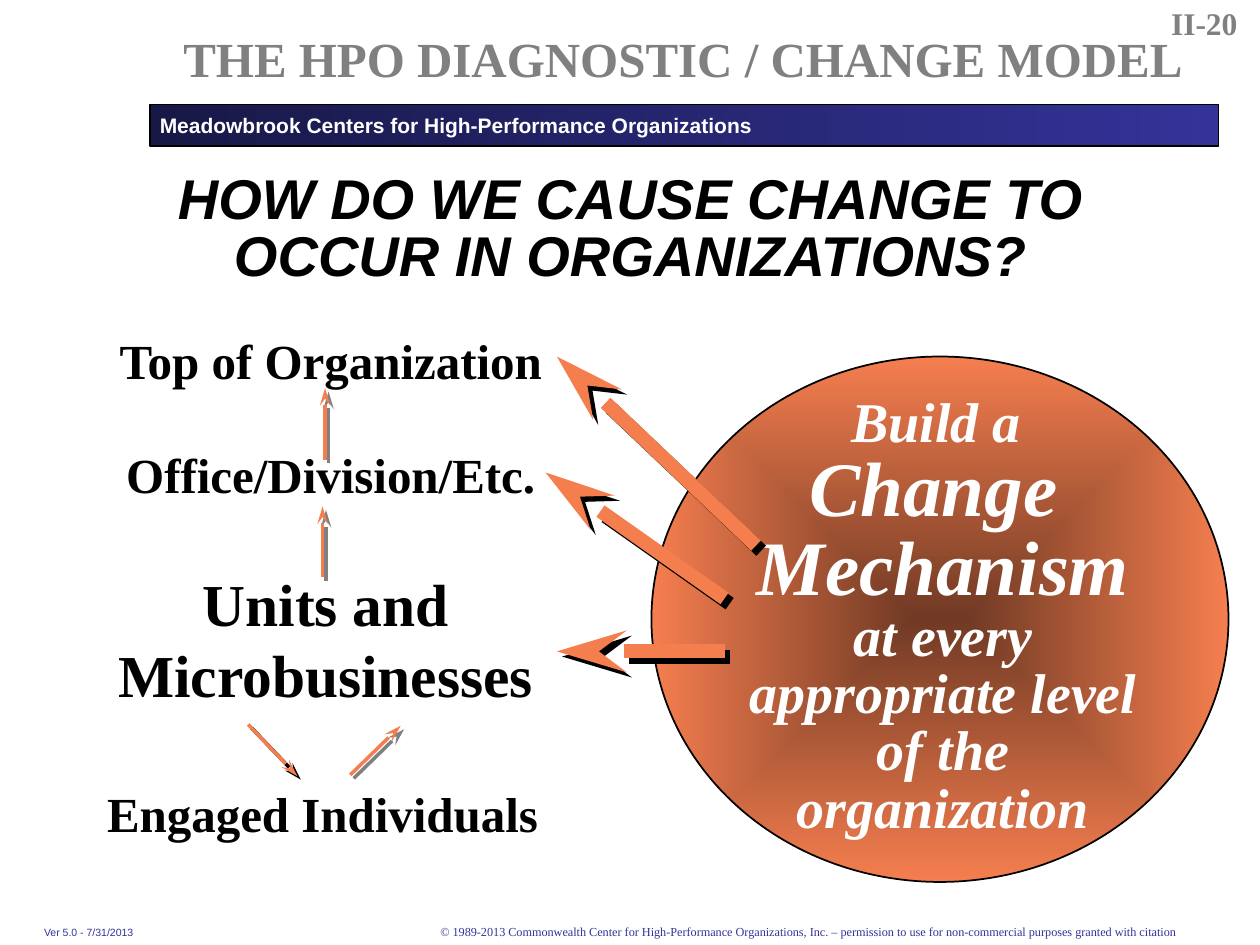
"""Build the organizational change model slide."""
from lxml.etree import SubElement
from pptx import Presentation
from pptx.dml.color import RGBColor
from pptx.enum.shapes import MSO_CONNECTOR, MSO_SHAPE
from pptx.enum.text import MSO_ANCHOR, MSO_AUTO_SIZE, PP_ALIGN
from pptx.oxml import parse_xml
from pptx.oxml.ns import nsdecls, qn
from pptx.util import Inches, Pt

BLACK = RGBColor(0x00, 0x00, 0x00)
WHITE = RGBColor(0xFF, 0xFF, 0xFF)
GRAY = RGBColor(0x80, 0x80, 0x80)
SILVER = RGBColor(0xC0, 0xC0, 0xC0)
ORANGE = RGBColor(0xF5, 0x7E, 0x4F)
BROWN = RGBColor(0x71, 0x3A, 0x24)
BLUE = RGBColor(0x33, 0x33, 0x99)
NAVY = RGBColor(0x18, 0x18, 0x47)
SERIF = "Times New Roman"
SANS = "Arial"
CENTER = PP_ALIGN.CENTER


def shadow_effect(color, distance):
    """Return an effect list with one diagonal shadow."""
    return parse_xml(
        f'<a:effectLst {nsdecls("a")}><a:outerShdw dist="{Pt(distance)}" dir="2700000" '
        f'algn="ctr" rotWithShape="0"><a:srgbClr val="{color}"/></a:outerShdw></a:effectLst>'
    )


class SlideBuilder:
    """Hold the text style and the current slide."""

    style = {"name": SERIF, "bold": True, "italic": False}

    def __init__(self, slide):
        """Keep the slide that receives the elements."""
        self.slide = slide

    def format_text(self, shape, lines, size, color, align=CENTER, anchor=MSO_ANCHOR.TOP,
                    margins=(0.1, 0.05), wrap=True, spacing=None, gap=0, shadow=None, **changes):
        """Fill a shape with formatted paragraphs."""
        frame = shape.text_frame
        across, down = (Inches(margin) for margin in margins)
        layout = {"word_wrap": wrap, "auto_size": MSO_AUTO_SIZE.NONE, "vertical_anchor": anchor,
                  "margin_left": across, "margin_right": across,
                  "margin_top": down, "margin_bottom": down}
        for name, value in layout.items():
            setattr(frame, name, value)
        sizes = size if isinstance(size, list) else [size] * len(lines)
        for index, (line, points) in enumerate(zip(lines, sizes)):
            paragraph = frame.add_paragraph() if index else frame.paragraphs[0]
            paragraph.text = line
            values = {"alignment": align, "line_spacing": spacing,
                      "space_before": Pt(gap if index else 0)}
            for name, value in values.items():
                setattr(paragraph, name, value)
            for run in paragraph.runs:
                for name, value in {**self.style, "size": Pt(points), **changes}.items():
                    setattr(run.font, name, value)
                run.font.color.rgb = color
                if shadow is not None:
                    fill = run.font._element.find(qn("a:solidFill"))
                    fill.addnext(shadow_effect(shadow, 2))

    def title(self, box, text, size, color, **options):
        """Move and format the title placeholder."""
        shape = self.slide.shapes.title
        for name, value in zip(("left", "top", "width", "height"), box):
            setattr(shape, name, Inches(value))
        self.format_text(shape, [text], size, color, **options)

    def text(self, box, lines, size, color, **options):
        """Add a text box."""
        shape = self.slide.shapes.add_textbox(*map(Inches, box))
        self.format_text(shape, lines, size, color, **options)

    def gradient(self, kind, box, colors, radial=False):
        """Add an outlined shape with a two-color gradient."""
        shape = self.slide.shapes.add_shape(kind, *map(Inches, box))
        shape.shadow.inherit = False
        shape.line.color.rgb = BLACK
        shape.line.width = Pt(1)
        shape.fill.gradient()
        shape.fill.gradient_angle = 0
        for stop, color in zip(shape.fill.gradient_stops, colors):
            stop.color.rgb = color
        if radial:
            linear = shape._element.spPr.find(qn("a:gradFill")).find(qn("a:lin"))
            linear.getparent().replace(linear, parse_xml(
                f'<a:path {nsdecls("a")} path="shape">'
                '<a:fillToRect l="50000" t="50000" r="50000" b="50000"/></a:path>'
            ))

    def arrow(self, start, end, width, shadow, distance):
        """Add a straight arrow with a shadow."""
        connector = self.slide.shapes.add_connector(
            MSO_CONNECTOR.STRAIGHT, *map(Inches, (*start, *end)))
        connector.line.color.rgb = ORANGE
        connector.line.width = Pt(width)
        properties = connector._element.spPr
        SubElement(properties.find(qn("a:ln")), qn("a:tailEnd"), type="stealth", w="med", len="lg")
        properties.append(shadow_effect(shadow, distance))


def main():
    """Create and save the presentation."""
    presentation = Presentation()
    presentation.slide_width = Inches(10)
    presentation.slide_height = Inches(7.5)
    builder = SlideBuilder(presentation.slides.add_slide(presentation.slide_layouts[5]))
    middle = MSO_ANCHOR.MIDDLE

    footer = {"bold": False, "margins": (0, 0), "anchor": middle}
    builder.text((0.35, 7.3, 1.17, 0.2), ["Ver 5.0 - 7/31/2013"], 6, BLUE,
                 align=PP_ALIGN.LEFT, name=SANS, **footer)
    builder.text((3.08, 7.28, 6.67, 0.22), [
        "© 1989-2013 Commonwealth Center for High-Performance Organizations, Inc. – "
        "permission to use for non-commercial purposes granted with citation"], 7, BLUE, **footer)

    builder.gradient(MSO_SHAPE.OVAL, (5.17, 2.83, 4.58, 4.17), (BROWN, ORANGE), radial=True)
    builder.text((5.83, 3.1, 3.31, 3.65),
                 ["Build a ", "Change \vMechanism", "at every appropriate level of the organization"],
                 [32, 44, 32], WHITE, spacing=0.85, shadow=BLACK, italic=True)

    builder.text((0.73, 6.17, 3.66, 0.57), ["Engaged Individuals"], 28, BLACK, wrap=False)
    builder.text((0.83, 2.57, 3.59, 1.52), ["Top of Organization", "Office/Division/Etc."],
                 28, BLACK, gap=32)
    builder.text((0.67, 4.45, 3.83, 1.25), ["Units and Microbusinesses"], 34, BLACK)

    for start, end in (((5.75, 5.17), (4.42, 5.17)),
                       ((5.75, 4.75), (4.33, 3.75)),
                       ((6, 4.33), (4.42, 2.83))):
        builder.arrow(start, end, 8, BLACK, 4.2)
    for start, end, shadow in (((2.56, 4.58), (2.56, 4.02), GRAY),
                               ((2.58, 3.65), (2.58, 3.08), GRAY),
                               ((1.97, 5.75), (2.36, 6.16), BLACK),
                               ((2.78, 6.15), (3.18, 5.76), GRAY)):
        builder.arrow(start, end, 2, shadow, 2.8)

    builder.gradient(MSO_SHAPE.RECTANGLE, (1.19, 0.83, 8.48, 0.33), (NAVY, BLUE))
    builder.text((1.17, 0.84, 7.63, 0.31), ["Meadowbrook Centers for High-Performance Organizations"],
                 12, WHITE, align=PP_ALIGN.LEFT, name=SANS)
    builder.text((9, 0.02, 0.92, 0.33), ["II-20"], 18, GRAY,
                 align=PP_ALIGN.RIGHT, anchor=middle, wrap=False)
    builder.title((1.17, 0.08, 8.5, 0.76), "THE HPO DIAGNOSTIC / CHANGE MODEL", 28, GRAY,
                  anchor=middle, shadow=BLACK)
    builder.text((0.67, 1.33, 8.67, 1.03), ["HOW DO WE CAUSE CHANGE TO OCCUR IN ORGANIZATIONS?"],
                 32, BLACK, spacing=0.85, shadow=SILVER, name=SANS, italic=True)
    presentation.save("out.pptx")


if __name__ == "__main__":
    main()
